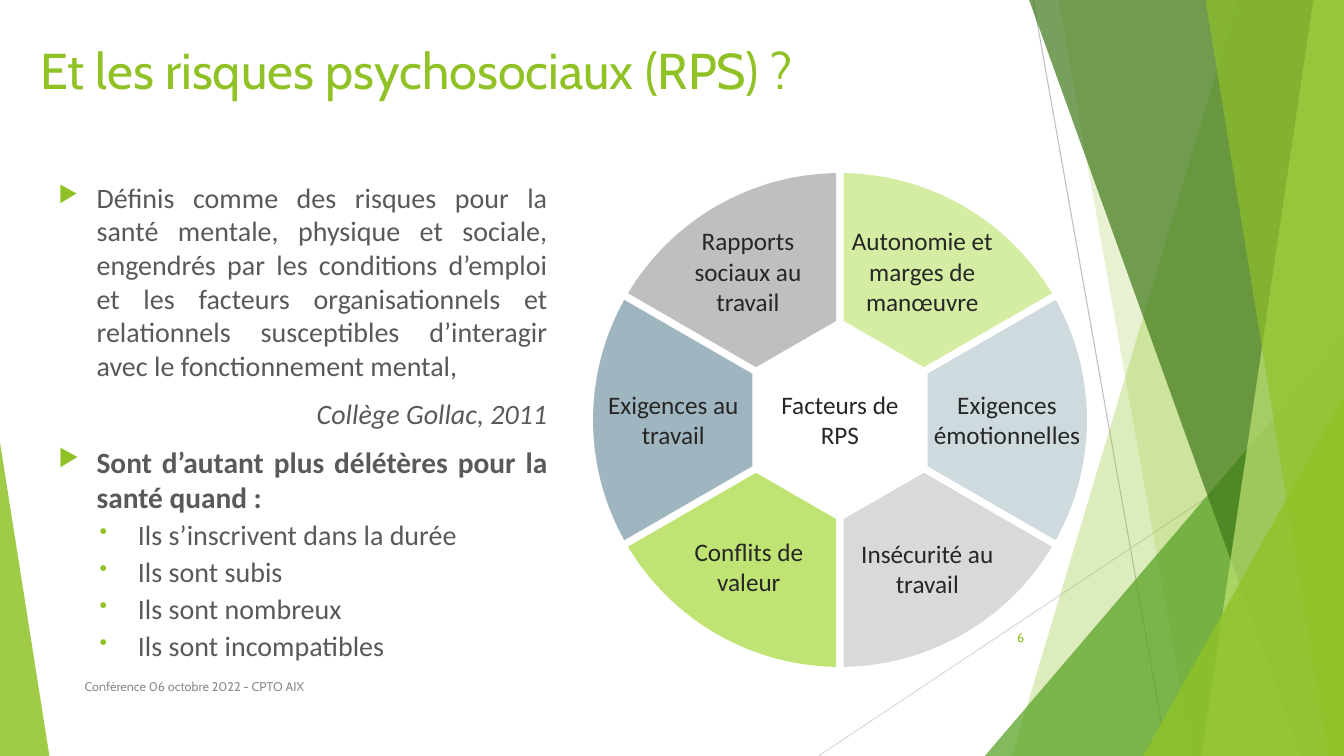
import math

from lxml import etree
from pptx import Presentation
from pptx.dml.color import RGBColor
from pptx.enum.shapes import MSO_CONNECTOR, MSO_SHAPE
from pptx.enum.text import MSO_ANCHOR, PP_ALIGN
from pptx.oxml.ns import qn
from pptx.util import Inches, Pt

STRAIGHT = MSO_CONNECTOR.STRAIGHT
TRIANGLE = MSO_SHAPE.ISOSCELES_TRIANGLE
TOP, MIDDLE = MSO_ANCHOR.TOP, MSO_ANCHOR.MIDDLE
LEFT, CENTER, RIGHT, JUSTIFY = (
    PP_ALIGN.LEFT, PP_ALIGN.CENTER, PP_ALIGN.RIGHT, PP_ALIGN.JUSTIFY)

# Grid of 160 columns by 90 rows, each cell a twelfth of an inch
COLS, ROWS = 160, 90
CELL = Inches(1) / 12

GREEN = RGBColor(0x90, 0xC2, 0x26)
MID_GREEN = RGBColor(0x54, 0xA0, 0x21)
DARK_GREEN = RGBColor(0x3F, 0x78, 0x19)
LIME = RGBColor(0xC0, 0xE4, 0x74)
PALE_LIME = RGBColor(0xD5, 0xED, 0xA2)
PALE_BLUE = RGBColor(0xCF, 0xDA, 0xDF)
BLUE_GREY = RGBColor(0x9F, 0xB6, 0xC0)
SILVER = RGBColor(0xD9, 0xD9, 0xD9)
GREY = RGBColor(0xBF, 0xBF, 0xBF)
FOOTER_GREY = RGBColor(0x8C, 0x8C, 0x8C)
BODY_GREY = RGBColor(0x59, 0x59, 0x59)
INK = RGBColor(0x26, 0x26, 0x26)

# Wheel, in grid cells
WHEEL_X, WHEEL_Y = 100, 50
RADIUS, HUB_APOTHEM, HALF_GAP = 29.4, 10.44, 0.45
ARC_STEPS = 32
# Sector colour, label, offset of the label from the hub; clockwise from the top
FACTORS = [
    (PALE_LIME, "Autonomie et marges de manœuvre", 9.8, -17.66, 3),
    (PALE_BLUE, "Exigences émotionnelles", 19.88, 0, 2),
    (SILVER, "Insécurité au travail", 10.4, 17.74, 2),
    (LIME, "Conflits de valeur", -10.84, 17.5, 2),
    (BLUE_GREY, "Exigences au travail", -19.84, 0, 2),
    (GREY, "Rapports sociaux au travail", -10.96, -17.66, 3),
]

DEFINITION = (
    "Définis comme des risques pour la santé mentale, physique et sociale, "
    "engendrés par les conditions d’emploi et les facteurs organisationnels et "
    "relationnels susceptibles d’interagir avec le fonctionnement mental,")
AGGRAVATING = ["Ils s’inscrivent dans la durée", "Ils sont subis",
               "Ils sont nombreux", "Ils sont incompatibles"]


def grid(cells):
    return round(cells * CELL)


def paint(shape, color, opacity=100):
    shape.shadow.inherit = False
    shape.line.fill.background()
    shape.fill.solid()
    shape.fill.fore_color.rgb = color
    if opacity < 100:
        srgb = shape.element.spPr.find(qn("a:solidFill"))[0]
        etree.SubElement(srgb, qn("a:alpha"), val=str(opacity * 1000))


def add_polygon(slide, points, color, opacity=100):
    corners = [(grid(x), grid(y)) for x, y in points]
    builder = slide.shapes.build_freeform(*corners[0], scale=1.0)
    builder.add_line_segments(corners[1:], close=True)
    paint(builder.convert_to_shape(), color, opacity)


def add_band(slide, top_x, bottom_x, color, opacity):
    """Fill from a slanted edge to the right side of the slide."""
    add_polygon(slide, [(top_x, 0), (COLS, 0), (COLS, ROWS), (bottom_x, ROWS)],
                color, opacity)


def add_corner(slide, left, top, width, apex, color, opacity):
    """Triangle standing on the bottom of the slide."""
    corner = slide.shapes.add_shape(
        TRIANGLE, grid(left), grid(top), grid(width), grid(ROWS - top))
    corner.adjustments[0] = apex
    paint(corner, color, opacity)


def add_hairline(slide, x1, y1, x2, y2, color):
    hairline = slide.shapes.add_connector(
        STRAIGHT, grid(x1), grid(y1), grid(x2), grid(y2))
    hairline.line.color.rgb = color
    hairline.line.width = Pt(0.75)
    etree.SubElement(hairline.element.spPr, qn("a:effectLst"))


def add_frame(slide, left, top, width, height, anchor=TOP):
    frame = slide.shapes.add_textbox(
        grid(left), grid(top), grid(width), grid(height)).text_frame
    frame.word_wrap = True
    frame.vertical_anchor = anchor
    return frame


def write(paragraph, text, size, color, font="Calibri", align=LEFT):
    paragraph.text = text
    paragraph.alignment = align
    paragraph.font.size = Pt(size)
    paragraph.font.name = font
    paragraph.font.color.rgb = color


def add_bullet(paragraph, char, margin):
    props = paragraph._p.get_or_add_pPr()
    props.set("marL", str(Inches(margin)))
    props.set("indent", str(Inches(-0.38)))
    bullet_color = etree.SubElement(props, qn("a:buClr"))
    etree.SubElement(bullet_color, qn("a:srgbClr"), val=str(GREEN))
    etree.SubElement(props, qn("a:buSzPct"), val="80000")
    etree.SubElement(props, qn("a:buChar"), char=char)


def add_backdrop(slide):
    add_hairline(slide, 123, 0, 138.96, ROWS, GREY)
    add_hairline(slide, COLS, 48.36, 97.44, ROWS, SILVER)
    add_band(slide, 147.36, 120.48, GREEN, 30)
    add_band(slide, 126, 141.96, GREEN, 20)
    add_corner(slide, 117.24, 39.96, 42.76, 1, MID_GREEN, 72)
    add_band(slide, 122.52, 154.92, DARK_GREEN, 70)
    add_band(slide, 156.36, 143.04, LIME, 70)
    add_band(slide, 143.52, 158.16, GREEN, 65)
    add_corner(slide, 136.08, 47.16, 23.92, 1, GREEN, 80)
    add_corner(slide, 0, 52.68, 5.88, 0, GREEN, 85)


def add_definition(slide):
    frame = add_frame(slide, 5.76, 20.88, 60.6, 61.2)
    definition = frame.paragraphs[0]
    write(definition, DEFINITION, 20, BODY_GREY, align=JUSTIFY)
    add_bullet(definition, "▶", 0.38)

    citation = frame.add_paragraph()
    write(citation, "Collège Gollac, 2011", 20, BODY_GREY, align=RIGHT)
    citation.font.italic = True

    warning = frame.add_paragraph()
    write(warning, "Sont d’autant plus délétères pour la santé quand :", 21,
          BODY_GREY, align=JUSTIFY)
    warning.font.bold = True
    add_bullet(warning, "▶", 0.38)
    for paragraph in (definition, citation, warning):
        paragraph.space_before = Pt(10)

    for condition in AGGRAVATING:
        item = frame.add_paragraph()
        write(item, condition, 20, BODY_GREY)
        item.line_spacing = 1.1
        add_bullet(item, "•", 0.79)


def add_sector(slide, index, color):
    middle = math.radians(60 * index - 60)
    half_arc = math.radians(30) - math.asin(HALF_GAP / RADIUS)
    half_side = (HUB_APOTHEM * math.tan(math.radians(30))
                 - HALF_GAP / math.cos(math.radians(30)))
    half_hub = math.atan2(half_side, HUB_APOTHEM)
    hub_radius = math.hypot(half_side, HUB_APOTHEM)
    polar = [(RADIUS, half_arc * (2 * step / ARC_STEPS - 1))
             for step in range(ARC_STEPS + 1)]
    polar += [(hub_radius, half_hub), (hub_radius, -half_hub)]
    add_polygon(slide, [(WHEEL_X + r * math.cos(middle + turn),
                         WHEEL_Y + r * math.sin(middle + turn))
                        for r, turn in polar], color)


def add_label(slide, text, dx, dy, lines):
    width, height = 20.4, 1.2 + 3.64 * lines
    frame = add_frame(slide, WHEEL_X + dx - width / 2,
                      WHEEL_Y + dy - height / 2, width, height)
    write(frame.paragraphs[0], text, 18, INK, align=CENTER)


def add_wheel(slide):
    for index, factor in enumerate(FACTORS):
        add_sector(slide, index, factor[0])
    for _, *label in FACTORS:
        add_label(slide, *label)
    add_label(slide, "Facteurs de RPS", 0, 0, 2)


def main():
    prs = Presentation()
    prs.slide_width, prs.slide_height = grid(COLS), grid(ROWS)
    slide = prs.slides.add_slide(prs.slide_layouts[6])
    add_backdrop(slide)
    # Title, footer and page number
    title = add_frame(slide, 3.6, 4.08, 117.12, 18.48)
    write(title.paragraphs[0], "Et les risques psychosociaux (RPS) ?", 36, GREEN, "Cabin")
    add_definition(slide)
    footer = add_frame(slide, 8.88, 79.32, 82.68, 4.8, MIDDLE)
    write(footer.paragraphs[0], "Conférence 06 octobre 2022 - CPTO AIX", 9, FOOTER_GREY, "Cabin")
    page = add_frame(slide, 114.12, 73.44, 9, 4.8, MIDDLE)
    write(page.paragraphs[0], "6", 9, GREEN, "Cabin", RIGHT)
    add_wheel(slide)
    prs.save("out.pptx")


if __name__ == "__main__":
    main()
